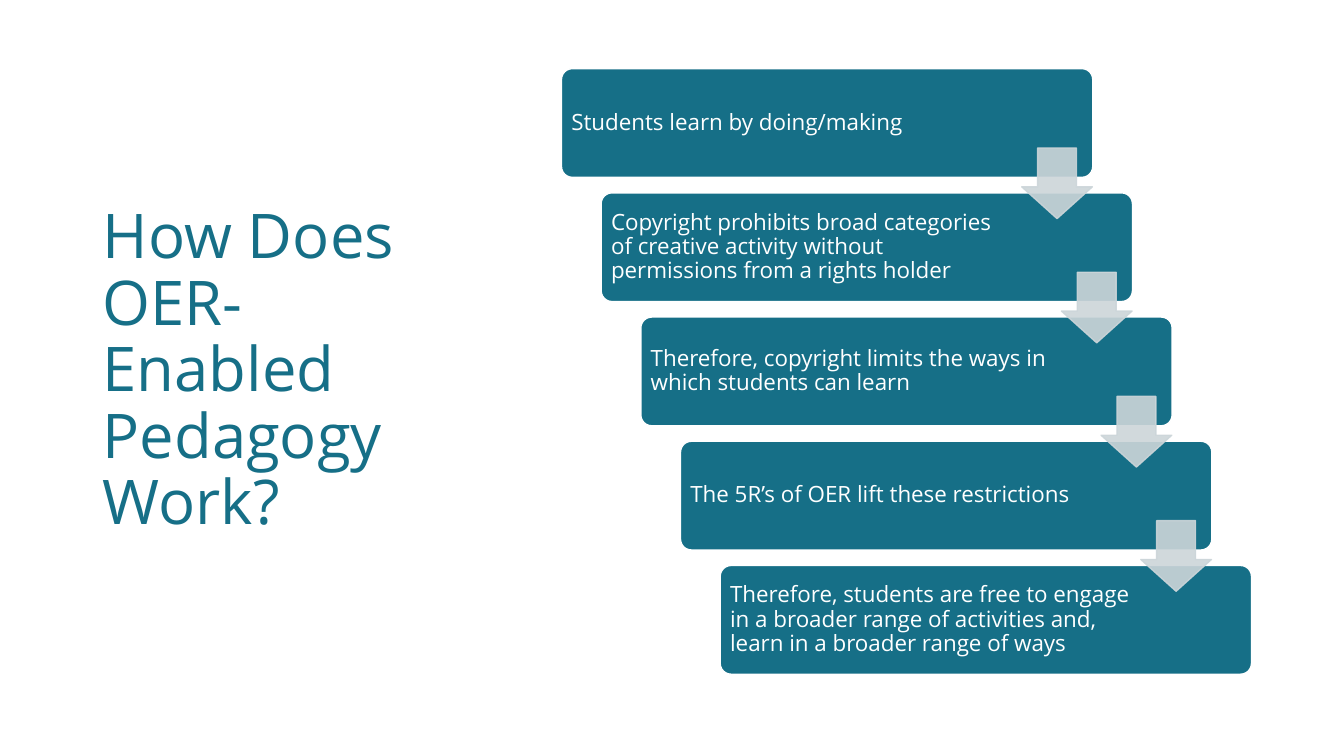
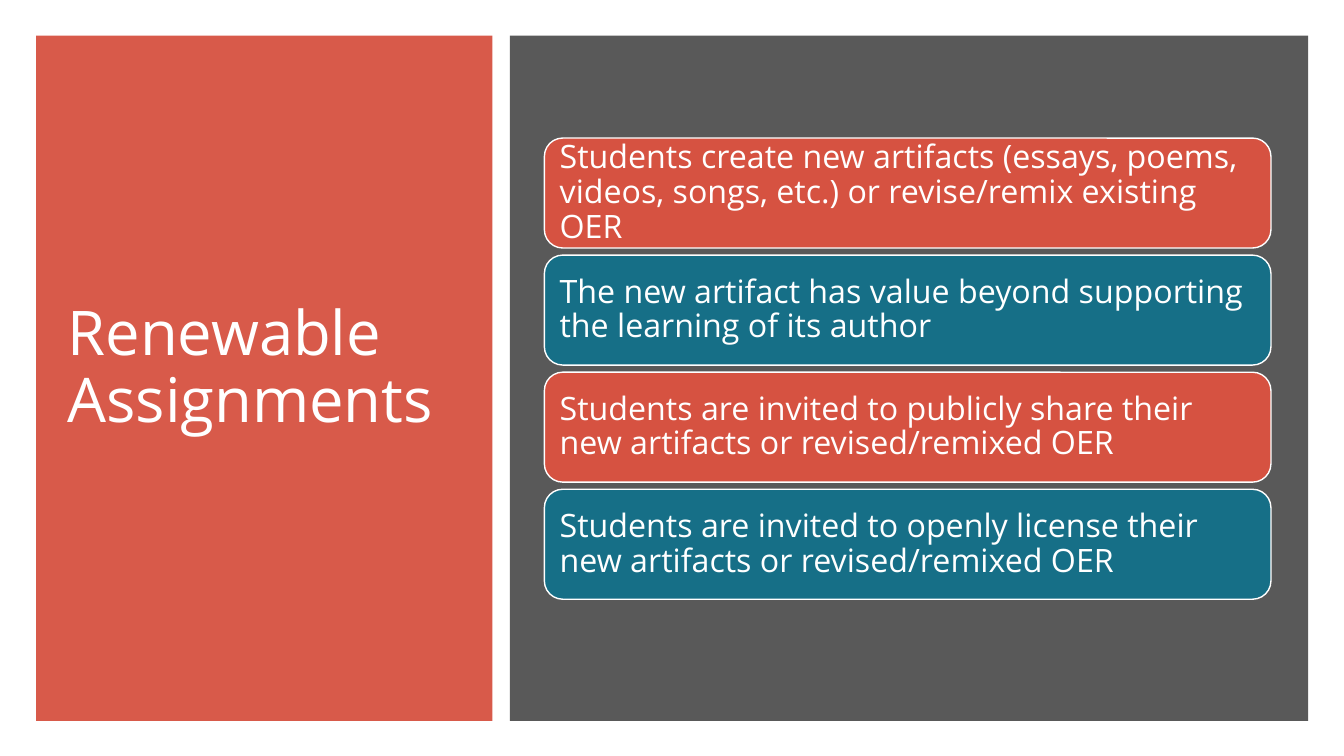
from lxml import etree
from pptx import Presentation
from pptx.dml.color import RGBColor
from pptx.enum.shapes import MSO_SHAPE
from pptx.enum.text import MSO_ANCHOR, PP_ALIGN
from pptx.oxml.ns import qn
from pptx.util import Cm, Pt

RECTANGLE = MSO_SHAPE.RECTANGLE
ROUNDED = MSO_SHAPE.ROUNDED_RECTANGLE
DOWN_ARROW = MSO_SHAPE.DOWN_ARROW
MIDDLE = MSO_ANCHOR.MIDDLE
LEFT = PP_ALIGN.LEFT

FONT = "Open Sans"
TITLE_SIZE = 44
TEAL = "166F87"
CORAL = "D65241"
GREY = "595959"
SILVER = "CCD5D9"
WHITE = "FFFFFF"

color = RGBColor.from_string


def add_block(slide, kind, left, top, width, height, fill, line=None, opacity=100):
    block = slide.shapes.add_shape(kind, Cm(left), Cm(top), Cm(width), Cm(height))
    block.shadow.inherit = False
    block.fill.solid()
    block.fill.fore_color.rgb = color(fill)
    if line:
        block.line.color.rgb = color(line)
        block.line.width = Pt(1)
    else:
        block.line.fill.background()
    if opacity < 100:
        for tint in block.element.iter(qn("a:srgbClr")):
            etree.SubElement(tint, qn("a:alpha")).set("val", str(opacity * 1000))
    return block


def write(holder, text, size, ink, margin, right_margin):
    frame = holder.text_frame
    frame.text = text
    frame.word_wrap = True
    frame.vertical_anchor = MIDDLE
    frame.margin_left = frame.margin_top = frame.margin_bottom = Cm(margin)
    frame.margin_right = Cm(right_margin)
    paragraph = frame.paragraphs[0]
    paragraph.alignment = LEFT
    paragraph.line_spacing = 0.9
    font = paragraph.runs[0].font
    font.name = FONT
    font.size = Pt(size)
    font.color.rgb = color(ink)


prs = Presentation()
prs.slide_width = Cm(33.87)
prs.slide_height = Cm(19.05)
blank = prs.slide_layouts[6]

pedagogy = prs.slides.add_slide(blank)
question = pedagogy.shapes.add_textbox(Cm(2.34), Cm(1.73), Cm(9.37), Cm(15.29))
write(question, "How Does OER-Enabled Pedagogy Work?", TITLE_SIZE, TEAL, 0.25, 0.25)

steps = [
    "Students learn by doing/making",
    "Copyright prohibits broad categories of creative activity without permissions from a rights holder",
    "Therefore, copyright limits the ways in which students can learn",
    "The 5R’s of OER lift these restrictions",
    "Therefore, students are free to engage in a broader range of activities and, learn in a broader range of ways",
]
STEP_RIGHT, STEP_DOWN = 1, 3.13
for i, text in enumerate(steps):
    step = add_block(pedagogy, ROUNDED, 14.15 + i * STEP_RIGHT, 1.73 + i * STEP_DOWN,
                     13.39, 2.74, TEAL, WHITE)
    step.adjustments[0] = 0.1
    write(step, text, 16, WHITE, 0.17, 2.95)

for i in range(len(steps) - 1):
    arrow = add_block(pedagogy, DOWN_ARROW, 25.75 + i * STEP_RIGHT, 3.73 + i * STEP_DOWN,
                      1.78, 1.78, SILVER, SILVER, 90)
    arrow.adjustments[0] = 0.55
    arrow.adjustments[1] = 0.45

assignments = prs.slides.add_slide(blank)
add_block(assignments, RECTANGLE, 0.91, 0.9, 11.5, 17.27, CORAL, opacity=95)
heading = assignments.shapes.add_textbox(Cm(1.45), Cm(1.63), Cm(10.34), Cm(15.34))
write(heading, "Renewable Assignments", TITLE_SIZE, WHITE, 0.25, 0.25)
add_block(assignments, RECTANGLE, 12.85, 0.9, 20.12, 17.27, GREY)

criteria = [
    "Students create new artifacts (essays, poems, videos, songs, etc.) or revise/remix existing OER",
    "The new artifact has value beyond supporting the learning of its author",
    "Students are invited to publicly share their new artifacts or revised/remixed OER",
    "Students are invited to openly license their new artifacts or revised/remixed OER",
]
for i, text in enumerate(criteria):
    criterion = add_block(assignments, ROUNDED, 13.72, 3.48 + i * 2.95, 18.31, 2.77,
                          (CORAL, TEAL)[i % 2], WHITE)
    write(criterion, text, 23, WHITE, 0.25, 0.25)

prs.save("out.pptx")
